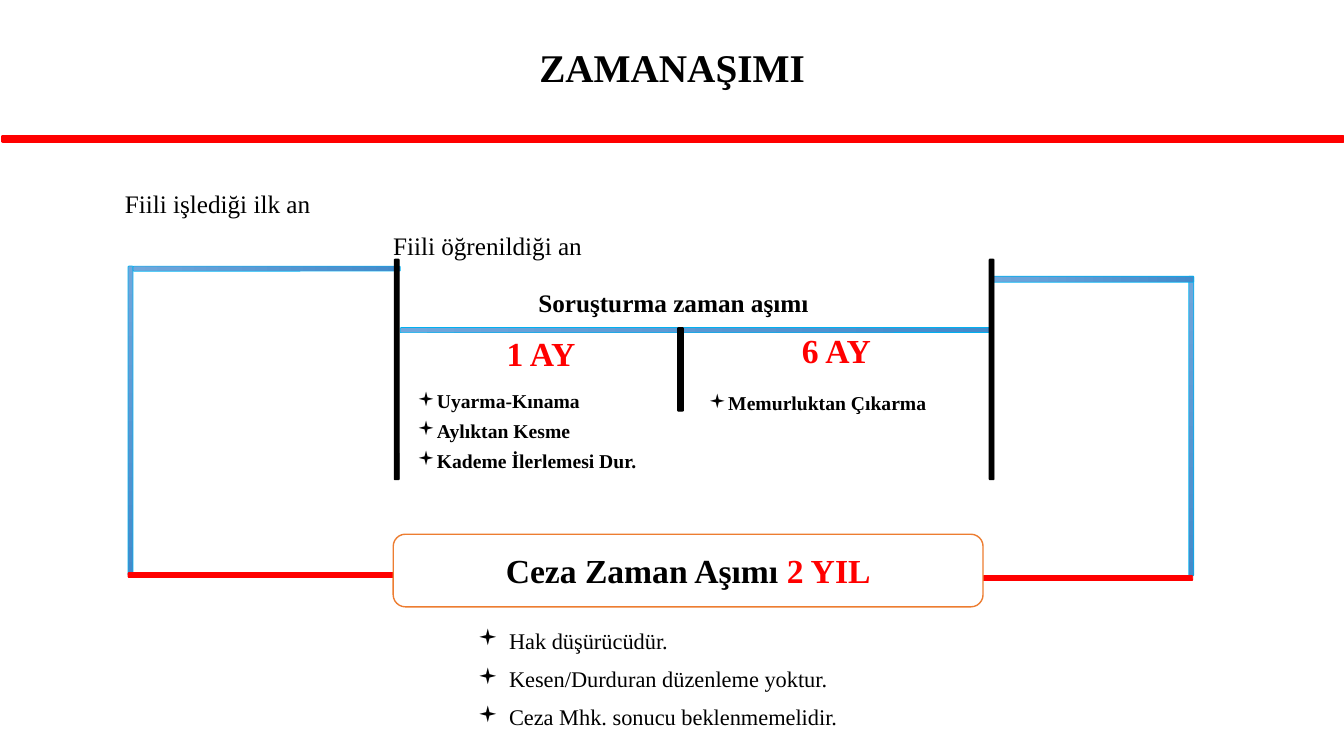
from dataclasses import dataclass

from lxml.etree import SubElement
from pptx import Presentation
from pptx.dml.color import RGBColor
from pptx.enum.shapes import MSO_SHAPE
from pptx.enum.text import MSO_ANCHOR, PP_ALIGN
from pptx.oxml.ns import qn
from pptx.util import Inches, Pt


@dataclass(frozen=True)
class Theme:
    font: str = "Times New Roman"
    black: RGBColor = RGBColor(0, 0, 0)
    white: RGBColor = RGBColor(255, 255, 255)
    red: RGBColor = RGBColor(255, 0, 0)
    orange: RGBColor = RGBColor(0xED, 0x7D, 0x31)
    sky: RGBColor = RGBColor(0x00, 0xB0, 0xF0)
    blue_light: RGBColor = RGBColor(0x71, 0xA6, 0xDB)
    blue_dark: RGBColor = RGBColor(0x44, 0x8A, 0xCA)
    title_size: int = 28
    period_size: int = 24
    label_size: int = 18
    note_size: int = 16
    penalty_size: int = 14
    bar: float = 0.05


@dataclass(frozen=True)
class Box:
    left: float
    top: float
    width: float
    height: float

    def inner(self, left, top, width, height):
        """A box placed relative to this one."""
        return Box(self.left + left, self.top + top, width, height)

    def lengths(self):
        return [Inches(value) for value in (self.left, self.top, self.width, self.height)]


THEME = Theme()


# Shared building blocks
def add_run(paragraph, text, size, color=THEME.black, bold=False):
    run = paragraph.add_run()
    run.text = text
    run.font.name = THEME.font
    run.font.size = Pt(size)
    run.font.bold = bold
    run.font.color.rgb = color


def add_text(slide, box, text, size, color=THEME.black, bold=False,
             align=PP_ALIGN.LEFT, anchor=MSO_ANCHOR.TOP, wrap=True):
    frame = slide.shapes.add_textbox(*box.lengths()).text_frame
    frame.word_wrap = wrap
    frame.vertical_anchor = anchor
    paragraph = frame.paragraphs[0]
    paragraph.alignment = align
    paragraph.line_spacing = 0.9 if wrap else 1.0
    add_run(paragraph, text, size, color, bold)


def add_bullets(slide, box, items, size, indent, gap, bold=False):
    frame = slide.shapes.add_textbox(*box.lengths()).text_frame
    frame.word_wrap = True
    for index, item in enumerate(items):
        paragraph = frame.add_paragraph() if index else frame.paragraphs[0]
        properties = paragraph._p.get_or_add_pPr()
        properties.set("marL", str(Inches(indent)))
        properties.set("indent", str(-Inches(indent)))
        SubElement(properties, qn("a:buFont")).set("typeface", "Wingdings")
        SubElement(properties, qn("a:buChar")).set("char", "▪")
        paragraph.line_spacing = 0.9
        if index:
            paragraph.space_before = Pt(gap)
        add_run(paragraph, item, size, bold=bold)


def add_block(slide, box, fill, line, line_width=0.5, kind=MSO_SHAPE.ROUNDED_RECTANGLE):
    shape = slide.shapes.add_shape(kind, *box.lengths())
    shape.shadow.inherit = False
    shape.fill.solid()
    shape.fill.fore_color.rgb = fill
    shape.line.color.rgb = line
    shape.line.width = Pt(line_width)
    return shape


def add_blue_bar(slide, box):
    """A bar that darkens along its longer side."""
    shape = add_block(slide, box, THEME.blue_light, THEME.sky)
    shape.fill.gradient()
    shape.fill.gradient_angle = 0 if box.width > box.height else 270
    for stop, color, position in zip(shape.fill.gradient_stops,
                                     (THEME.blue_light, THEME.blue_dark), (0, 1)):
        stop.color.rgb = color
        stop.position = position


# Title and the red rule below it
def add_header(slide, box):
    add_block(slide, box.inner(0.03, 1.32, box.width - 0.03, THEME.bar),
              THEME.red, THEME.red, 2.25, MSO_SHAPE.RECTANGLE)
    add_text(slide, box, "ZAMANAŞIMI", THEME.title_size, bold=True,
             align=PP_ALIGN.CENTER, anchor=MSO_ANCHOR.MIDDLE)


# Left bracket: from the act to its discovery
def add_left_bracket(slide, box):
    add_text(slide, box.inner(-0.13, -0.82, 2.06, 0.4), "Fiili işlediği ilk an",
             THEME.label_size, wrap=False)
    add_blue_bar(slide, box.inner(0, 0, THEME.bar, box.height))
    add_blue_bar(slide, box.inner(THEME.bar, 0, box.width, THEME.bar))
    add_block(slide, box.inner(0, box.height - 0.03, box.width, THEME.bar),
              THEME.red, THEME.red)


# Right bracket: from the end of the investigation to the penalty
def add_right_bracket(slide, box):
    add_blue_bar(slide, box.inner(box.width - THEME.bar, 0, THEME.bar, box.height))
    add_blue_bar(slide, box.inner(0, 0, box.width, 0.06))
    add_block(slide, box.inner(-0.1, box.height, box.width + 0.09, THEME.bar),
              THEME.red, THEME.red)


# One investigation period with its penalties
def add_period(slide, box, period, penalties, list_left, list_top):
    add_text(slide, box.inner(0, 0, box.width, 0.38), period, THEME.period_size,
             THEME.red, bold=True, align=PP_ALIGN.CENTER)
    add_bullets(slide, box.inner(list_left, list_top, box.width, box.height - list_top),
                penalties, THEME.penalty_size, 0.12, 6, bold=True)


# Investigation span between two posts
def add_investigation(slide, box):
    add_text(slide, box.inner(-0.11, -0.33, 2.1, 0.4), "Fiili öğrenildiği an",
             THEME.label_size, wrap=False)
    add_text(slide, box.inner(1.33, 0.23, 2.91, 0.4), "Soruşturma zaman aşımı",
             THEME.label_size, bold=True, wrap=False)
    add_blue_bar(slide, box.inner(0.06, 0.68, box.width - 0.1, THEME.bar))
    for left in (0, box.width - THEME.bar):
        add_block(slide, box.inner(left, 0, THEME.bar, box.height), THEME.black, THEME.black)
    add_block(slide, box.inner(2.81, 0.68, 0.06, 0.83), THEME.black, THEME.black)
    add_period(slide, box.inner(0.13, 0.73, 2.65, 1.53), "1 AY",
               ["Uyarma-Kınama", "Aylıktan Kesme", "Kademe İlerlemesi Dur."], 0, 0.54)
    add_period(slide, box.inner(3.06, 0.7, 2.65, 1.1), "6 AY",
               ["Memurluktan Çıkarma"], -0.04, 0.59)


# Penalty period and its notes
def add_penalty(slide, box):
    shape = add_block(slide, box.inner(0, 0, box.width, 0.72), THEME.white, THEME.orange, 1)
    shape.text_frame.vertical_anchor = MSO_ANCHOR.MIDDLE
    paragraph = shape.text_frame.paragraphs[0]
    paragraph.alignment = PP_ALIGN.CENTER
    add_run(paragraph, "Ceza Zaman Aşımı ", THEME.period_size, bold=True)
    add_run(paragraph, "2 YIL", THEME.period_size, THEME.red, bold=True)
    add_bullets(slide, box.inner(0.74, 0.9, 3.82, box.height - 0.9),
                ["Hak düşürücüdür.", "Kesen/Durduran düzenleme yoktur.",
                 "Ceza Mhk. sonucu beklenmemelidir."], THEME.note_size, 0.31, 10)


def main():
    presentation = Presentation()
    presentation.slide_width = Inches(13.33)
    presentation.slide_height = Inches(7.5)
    slide = presentation.slides.add_slide(presentation.slide_layouts[6])
    add_header(slide, Box(0, 0.03, 13.33, 1.33))
    add_left_bracket(slide, Box(1.27, 2.64, 2.65, 3.07))
    add_right_bracket(slide, Box(9.85, 2.74, 1.99, 2.97))
    add_investigation(slide, Box(3.91, 2.57, 5.95, 2.19))
    add_penalty(slide, Box(3.9, 5.3, 5.85, 2.09))
    presentation.save("out.pptx")


if __name__ == "__main__":
    main()
